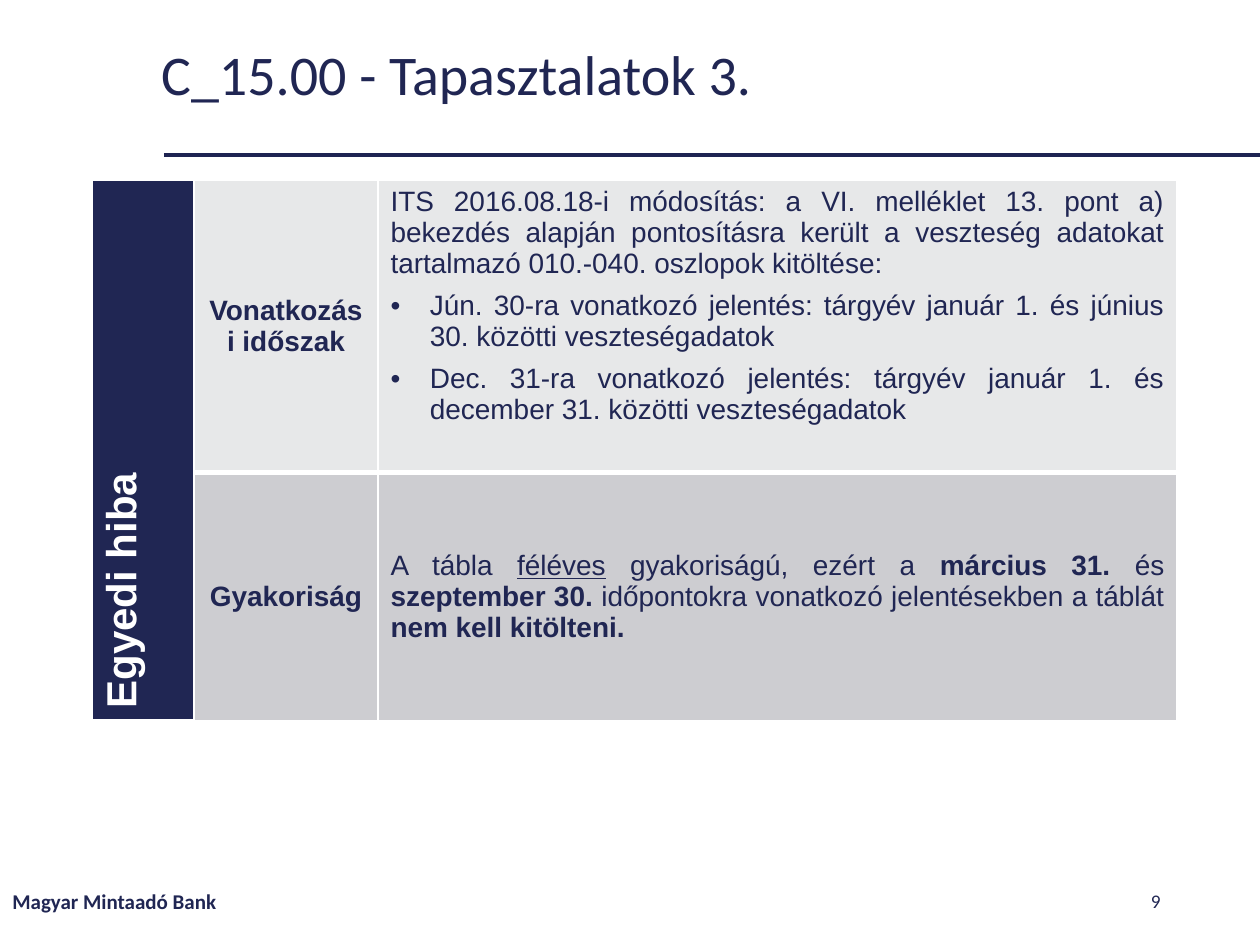
"""Build the slide on the reporting period and frequency of table C_15.00."""
import dataclasses

import pptx
import pptx.dml.color
import pptx.enum.shapes
import pptx.enum.text
import pptx.oxml.ns
import pptx.util
from lxml import etree

Pt = pptx.util.Pt
Align = pptx.enum.text.PP_ALIGN
Mid = pptx.enum.text.MSO_ANCHOR.MIDDLE
Top = pptx.enum.text.MSO_ANCHOR.TOP


def rgb(code):
    return pptx.dml.color.RGBColor.from_string(code)


def child(node, tag, **attrs):
    return etree.SubElement(node, pptx.oxml.ns.qn(tag), **attrs)


@dataclasses.dataclass
class Theme:
    navy: str = "202653"
    rule: str = "1E2452"
    white: str = "FFFFFF"
    light: str = "E7E8E9"
    grey: str = "CDCDD1"
    head: str = "Calibri"
    body: str = "Arial"
    title: float = 32
    side: float = 24
    cell: float = 16
    foot: float = 12
    page: float = 11


class Deck:
    def __init__(self, theme):
        self.theme = theme
        self.file = pptx.Presentation()
        self.file.slide_width, self.file.slide_height = Pt(720), Pt(540)
        self.slide = self.file.slides.add_slide(self.file.slide_layouts[6])

    def para(self, par, runs, size, face, ink, align=Align.LEFT, after=0, dot=False):
        if dot:
            props = par._p.get_or_add_pPr()
            props.set("marL", str(Pt(22.5)))
            props.set("indent", str(-Pt(22.5)))
            child(props, "a:buFont", typeface="Arial")
            child(props, "a:buChar", char="•")
        par.alignment = align
        par.space_after = Pt(after)
        for text, mark in runs:
            run = par.add_run()
            run.text = text
            font = run.font
            font.name, font.size = face, Pt(size)
            font.color.rgb = rgb(ink)
            font.bold = mark == "b"
            font.underline = mark == "u"

    def label(self, box, text, size, mark="", align=Align.LEFT, lead=None):
        frame = self.slide.shapes.add_textbox(*map(Pt, box)).text_frame
        frame.word_wrap = True
        frame.vertical_anchor = Mid
        par = frame.paragraphs[0]
        self.para(par, [(text, mark)], size, self.theme.head, self.theme.navy, align)
        if lead:
            par.line_spacing = lead

    def line(self, start, end, ink, width):
        kind = pptx.enum.shapes.MSO_CONNECTOR.STRAIGHT
        rule = self.slide.shapes.add_connector(kind, *map(Pt, start + end))
        rule.line.color.rgb = rgb(ink)
        rule.line.width = Pt(width)
        child(rule._element.spPr, "a:effectLst")

    def table(self, left, top, cols, rows):
        box = map(Pt, (left, top, sum(cols), sum(rows)))
        grid = self.slide.shapes.add_table(len(rows), len(cols), *box).table
        grid.first_row = grid.horz_banding = False
        for col, width in zip(grid.columns, cols):
            col.width = Pt(width)
        for row, height in zip(grid.rows, rows):
            row.height = Pt(height)
        return grid

    def cell(self, cell, fill, edges, paras=(), anchor=Mid, **style):
        props = cell._tc.get_or_add_tcPr()
        for side, width in zip("LRTB", edges):
            edge = child(props, "a:ln" + side, w=str(Pt(width)))
            ink = child(edge, "a:solidFill")
            child(ink, "a:srgbClr", val=self.theme.white)
        cell.fill.solid()
        cell.fill.fore_color.rgb = rgb(fill)
        cell.vertical_anchor = anchor
        look = dict(size=self.theme.cell, face=self.theme.body, ink=self.theme.navy)
        look.update(style)
        frame = cell.text_frame
        for num, (runs, extra) in enumerate(paras):
            par = frame.add_paragraph() if num else frame.paragraphs[0]
            self.para(par, runs, **look, **extra)


def main():
    theme = Theme()
    deck = Deck(theme)
    deck.line((93.6, 88.6), (720, 88.6), theme.rule, 2.25)
    deck.label((85, 14.4, 586.8, 59.8), "C_15.00 - Tapasztalatok 3.", theme.title, lead=0.9)
    deck.label((508.3, 500.4, 162, 28.8), "9", theme.page, align=Align.RIGHT)
    deck.label((0, 500.4, 243.4, 28.8), "Magyar Mintaadó Bank", theme.foot, "b")

    period = [
        ("ITS 2016.08.18-i módosítás: a VI. melléklet 13. pont a) bekezdés alapján "
         "pontosításra került a veszteség adatokat tartalmazó 010.-040. oszlopok kitöltése:",
         False),
        ("Jún. 30-ra vonatkozó jelentés: tárgyév január 1. és június 30. közötti "
         "veszteségadatok", True),
        ("Dec. 31-ra vonatkozó jelentés: tárgyév január 1. és december 31. közötti "
         "veszteségadatok", True),
    ]
    often = [
        ("A tábla ", ""), ("féléves", "u"), (" gyakoriságú, ezért a ", ""),
        ("március 31. ", "b"), ("és ", ""), ("szeptember 30. ", "b"),
        ("időpontokra vonatkozó jelentésekben a táblát ", ""),
        ("nem kell kitölteni.", "b"),
    ]
    first = [([(text, "")], dict(align=Align.JUSTIFY, after=6, dot=dot))
             for text, dot in period]
    last = [(often, dict(align=Align.JUSTIFY))]

    grid = deck.table(52.6, 103, (58.3, 105.1, 456.5), (167, 113))
    grid.cell(0, 0).merge(grid.cell(1, 0))
    side = grid.cell(0, 0)
    deck.cell(side, theme.navy, (1, 1, 1, 3), [([("Egyedi hiba", "b")], {})],
              size=theme.side, ink=theme.white)
    side._tc.get_or_add_tcPr().set("vert", "vert270")
    rows = [
        ("Vonatkozási időszak", first, theme.light, (1, 1, 1, 3), Top),
        ("Gyakoriság", last, theme.grey, (1, 1, 3, 1), Mid),
    ]
    for num, (name, paras, fill, edges, anchor) in enumerate(rows):
        head = [([(name, "b")], dict(align=Align.CENTER))]
        deck.cell(grid.cell(num, 1), fill, edges, head)
        deck.cell(grid.cell(num, 2), fill, edges, paras, anchor)
    deck.file.save("out.pptx")


if __name__ == "__main__":
    main()
